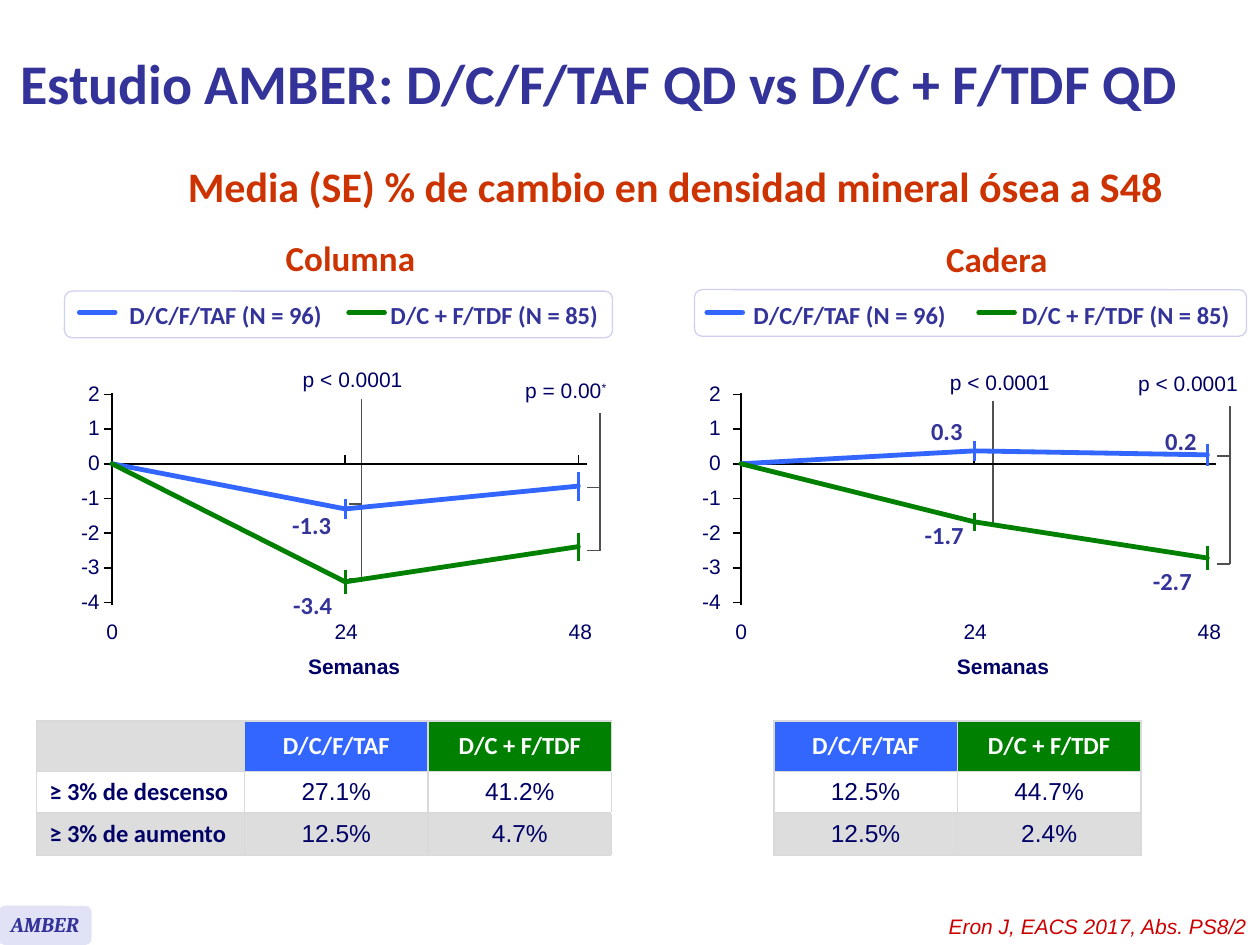
from lxml import etree
from pptx import Presentation
from pptx import util as u
from pptx.dml.color import RGBColor
from pptx.enum import shapes, text
from pptx.oxml.ns import qn

hue = RGBColor.from_string
BLUE, GREEN, NAVY, INDIGO, RUST = "3366FF", "008000", "000066", "333399", "CC3300"
GREY, RULE, WHITE = "DDDDDD", "D9D9D9", "FFFFFF"
LEFT, MID, RIGHT = text.PP_ALIGN.LEFT, text.PP_ALIGN.CENTER, text.PP_ALIGN.RIGHT

plain = {"name": "Arial", "size": u.Pt(12), "color": NAVY}
strong = plain | {"bold": True}
value = {"name": "Calibri", "size": u.Pt(14), "color": INDIGO, "bold": True}
head = value | {"size": u.Pt(20), "color": RUST}

deck = Presentation()
deck.slide_width, deck.slide_height = u.Cm(25.4), u.Cm(19.05)
slide = deck.slides.add_slide(deck.slide_layouts[5])
draw = slide.shapes


def write(host, words, look, align=LEFT, tight=False, wrap=False):
    if isinstance(host, list):
        host = draw.add_textbox(*map(u.Cm, host))
    frame = host.text_frame
    frame.word_wrap = wrap
    if tight:
        frame.vertical_anchor = text.MSO_ANCHOR.MIDDLE
        for side in ("left", "right", "top", "bottom"):
            setattr(frame, "margin_" + side, 0)
    para = frame.paragraphs[0]
    para.alignment = align
    if tight:
        para.line_spacing = 0.9
    run = para.add_run()
    run.text = words
    for key, val in look.items():
        if key == "color":
            run.font.color.rgb = hue(val)
        else:
            setattr(run.font, key, val)
    return para


def stroke(dots, tint, width):
    dots = [(u.Cm(x), u.Cm(y)) for x, y in dots]
    if len(dots) == 2:
        item = draw.add_connector(shapes.MSO_CONNECTOR.STRAIGHT, *dots[0], *dots[1])
    else:
        path = draw.build_freeform(*dots[0])
        path.add_line_segments(dots[1:], close=False)
        item = path.convert_to_shape()
        item.fill.background()
    item.line.color.rgb = hue(tint)
    item.line.width = u.Pt(width)
    props = item.element.spPr
    if width > 2:
        props.find(qn("a:ln")).set("cap", "rnd")
    etree.SubElement(props, qn("a:effectLst"))


title = draw.title
title.left, title.top, title.width, title.height = map(u.Cm, (0.15, 0.13, 24.26, 3.07))
title.text_frame.vertical_anchor = text.MSO_ANCHOR.MIDDLE
write(title, "Estudio AMBER: D/C/F/TAF QD vs D/C + F/TDF QD",
      value | {"size": u.Pt(32)}, wrap=True)
write([2.67, 3.12, 21.89, 1.27], "Media (SE) % de cambio en densidad mineral ósea a S48",
      head | {"size": u.Pt(24)}, MID, wrap=True)

ZERO, STEP, WEEK = 9.35, 0.7, 4.7
panels = [
    {"name": "Columna", "head": (3.61, 4.85), "x": 2.26, "edge": 2.26, "unit": 5.92,
     "key": (1.3, 5.87, 11.05, 0.94),
     "keys": [(1.6, 2.36), (7.03, 7.62)],
     "series": [(BLUE, (10.26, 9.8), (0.2, 0.29)), (GREEN, (11.73, 11.02), (0.24, 0.28))],
     "spans": [(7.29, 8.05, 10.16, 11.66, "505050"), (12.09, 8.33, 9.83, 11.1, "505050")],
     "tests": [([5.89, 7.32, 2.44, 0.71], "p < 0.0001"), ([10.39, 7.49, 2.03, 0.81], "p = 0.00")],
     "values": [(5.64, 10.16, "-1.3"), (5.66, 11.76, "-3.4")]},
    {"name": "Cadera", "head": (16.64, 4.88), "x": 14.94, "edge": 14.78, "unit": 19,
     "key": (14, 5.84, 11.13, 0.94),
     "keys": [(14.25, 14.94), (19.73, 20.35)],
     "series": [(BLUE, (9.09, 9.17), (0.2, 0.22)), (GREEN, (10.52, 11.25), (0.18, 0.25))],
     "spans": [(20.02, 8.08, 9.09, 10.55, BLUE), (24.79, 8.18, 9.19, 11.37, "505050")],
     "tests": [([19, 7.47, 2.31, 0.51], "p < 0.0001"), ([22.78, 7.34, 2.34, 0.84], "p < 0.0001")],
     "values": [(18.52, 8.26, "0.3"), (18.39, 10.36, "-1.7"),
                (22.99, 11.28, "-2.7"), (23.24, 8.46, "0.2")]},
]

for panel in panels:
    x = panel["x"]
    write([*panel["head"], 6.91, 0.79], panel["name"], head, MID, True)

    key = draw.add_shape(shapes.MSO_SHAPE.ROUNDED_RECTANGLE, *map(u.Cm, panel["key"]))
    key.shadow.inherit = False
    key.fill.solid()
    key.fill.fore_color.rgb = hue(WHITE)
    key.line.color.rgb = hue("D0D0F0")
    key.line.width = u.Pt(0.75)
    arms = (("D/C/F/TAF (N = 96)", BLUE, 4.42), ("D/C + F/TDF (N = 85)", GREEN, 4.75))
    for (start, left), (words, tint, wide) in zip(panel["keys"], arms):
        stroke([(start, 6.3), (start + 0.72, 6.3)], tint, 2.75)
        write([left, 5.92, wide, 0.86], words, value)

    for right, top, high, low, tint in panel["spans"]:
        stroke([(right, top), (right, low)], "505050", 1)
        stroke([(right - 0.25, high), (right, high)], tint, 1)
        stroke([(right - 0.25, low), (right, low)], "505050", 1)

    stroke([(x, 7.92), (x, 12.19)], "000000", 0.88)
    stroke([(x, ZERO), (x + 9.57, ZERO)], "000000", 0.88)
    for mark in range(2, -5, -1):
        y = ZERO - mark * STEP
        stroke([(x - 0.17, y), (x, y)], "000000", 0.88)
        wide = 0.74 if mark >= 0 else 0.89
        write([panel["edge"] - wide, y - 0.41, wide, 0.76], str(mark), plain, RIGHT)
    for i in range(3):
        across = x + i * WEEK
        if i:
            stroke([(across, ZERO), (across, ZERO - 0.18)], "000000", 0.88)
        write([x + i * 4.72 - 0.5, 12.34, 1, 0.76], str(24 * i), plain, MID)
    write([panel["unit"], 13.11, 2.44, 0.71], "Semanas", strong, MID, True)

    for tint, means, errors in panel["series"]:
        stroke([(x, ZERO)] + [(x + WEEK * i, y) for i, y in enumerate(means, 1)], tint, 2.75)
        for i, (y, err) in enumerate(zip(means, errors), 1):
            stroke([(x + WEEK * i, y - err), (x + WEEK * i, y + err)], tint, 1.88)

    for box, words in panel["tests"]:
        para = write(box, words, plain, MID, True)
        if words == "p = 0.00":
            star = para.add_run()
            star.text = "*"
            star.font.name, star.font.size = "Arial", u.Pt(12)
            star.font.color.rgb = hue(NAVY)
            star.font._element.set("baseline", "30000")
    for left, top, words in panel["values"]:
        write([left, top, 0.66 + 0.16 * len(words), 0.86], words, value)

rows = [
    ["", "D/C/F/TAF", "D/C + F/TDF", "", "D/C/F/TAF", "D/C + F/TDF"],
    ["≥ 3% de descenso", "27.1%", "41.2%", "", "12.5%", "44.7%"],
    ["≥ 3% de aumento", "12.5%", "4.7%", "", "12.5%", "2.4%"],
]
table = draw.add_table(3, 6, *map(u.Cm, (0.74, 14.53, 22.26, 2.72))).table
table.first_row = table.horz_banding = False
for col, wide in zip(table.columns, (4.19, 3.7, 3.7, 3.27, 3.7, 3.7)):
    col.width = u.Cm(wide)
for row, tall in zip(table.rows, (1.02, 0.84, 0.86)):
    row.height = u.Cm(tall)
tops = (GREY, BLUE, GREEN, WHITE, BLUE, GREEN)
for r, line in enumerate(rows):
    for c, words in enumerate(line):
        cell = table.cell(r, c)
        cell.vertical_anchor = text.MSO_ANCHOR.MIDDLE
        gap = c == 3
        if not words or (r and c):
            cell.margin_left = cell.margin_right = cell.margin_top = cell.margin_bottom = 0
        props = cell._tc.get_or_add_tcPr()
        for side in ("lnL", "lnR") if gap else ("lnL", "lnR", "lnT", "lnB"):
            edge = etree.SubElement(props, qn("a:" + side), w="12700")
            fill = etree.SubElement(edge, qn("a:solidFill"))
            etree.SubElement(fill, qn("a:srgbClr"), val=RULE)
        cell.fill.solid()
        cell.fill.fore_color.rgb = hue(WHITE if gap else (tops[c], WHITE, GREY)[r])
        if words:
            look = value | {"color": NAVY if r else WHITE}
            if r and c:
                look |= {"name": "Arial", "bold": False}
            para = write(cell, words, look, MID if c or not r else LEFT, wrap=True)
            if not (r and c):
                para.line_spacing = 0.9

badge = draw.add_shape(shapes.MSO_SHAPE.ROUNDED_RECTANGLE, *map(u.Cm, (-0.03, 18.26, 1.88, 0.79)))
badge.shadow.inherit = False
badge.fill.solid()
badge.fill.fore_color.rgb = hue("E2E2F6")
badge.line.fill.background()
write(badge, "AMBER", strong | {"name": "Cambria", "color": INDIGO, "italic": True}, MID, True)
write([14.81, 18.29, 10.57, 0.76], "Eron J, EACS 2017, Abs. PS8/2",
      plain | {"color": "CC0000", "italic": True}, RIGHT, wrap=True)

deck.save("out.pptx")
